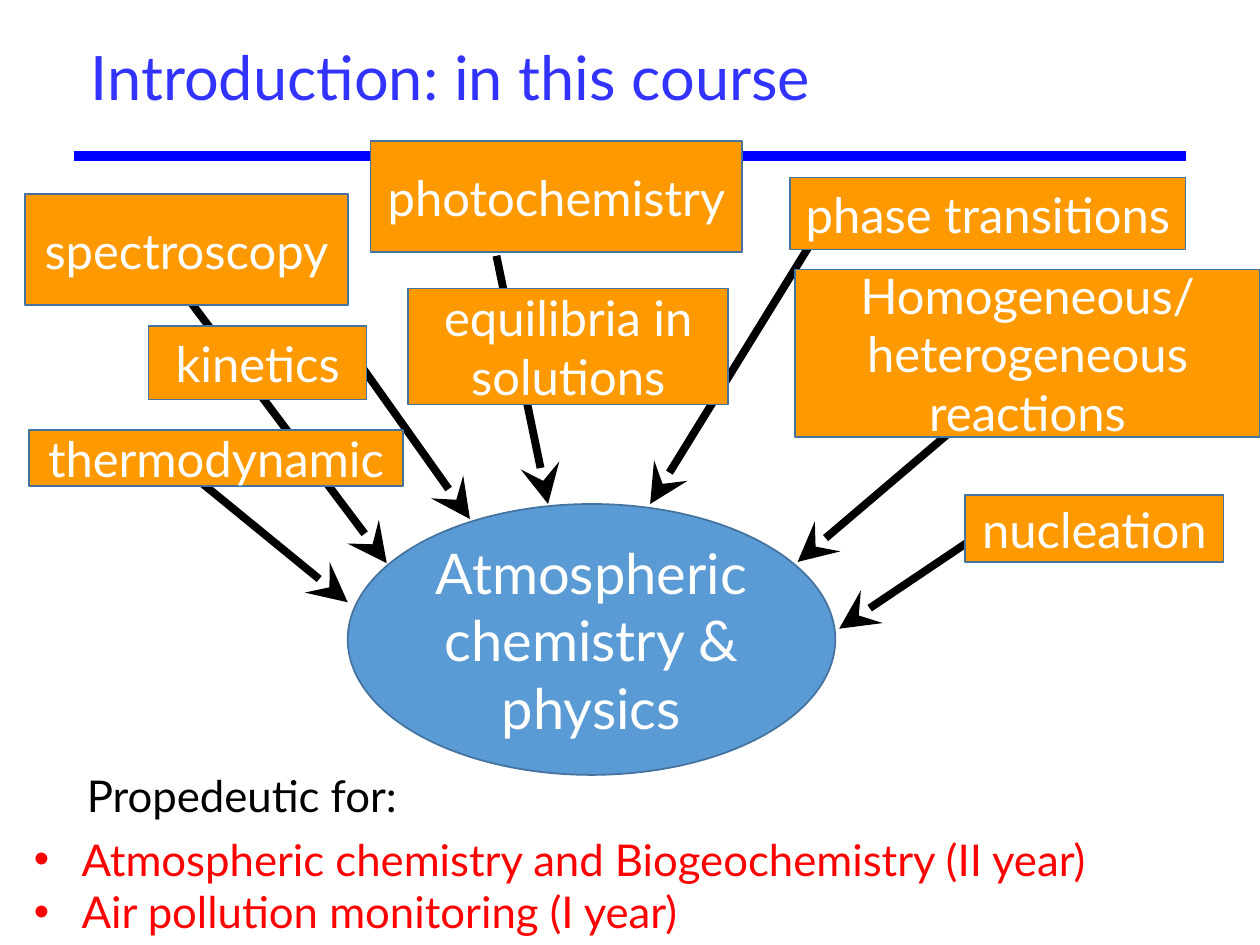
from lxml.etree import SubElement
from pptx import Presentation
from pptx.dml.color import RGBColor
from pptx.enum.shapes import MSO_CONNECTOR as CONNECTOR, MSO_SHAPE as SHAPE
from pptx.enum.text import MSO_ANCHOR as ANCHOR, PP_ALIGN as ALIGN
from pptx.oxml.ns import qn
from pptx.util import Inches, Pt


def color(value):
    return RGBColor.from_string(value)


def write(paragraph, words, size, ink):
    run = paragraph.add_run()
    run.text = words
    run.font.name = "Lato"
    run.font.size = Pt(size)
    run.font.color.rgb = color(ink)


prs = Presentation()
prs.slide_width = Inches(10)
prs.slide_height = Inches(7.5)
slide = prs.slides.add_slide(prs.slide_layouts[6])
shapes = slide.shapes

topic_arrows = [
    (2.75, 2.74, 3.73, 4.12),
    (1.23, 3.53, 2.76, 4.78),
    (7.85, 4.19, 6.66, 4.99),
    (7.81, 3.2, 6.33, 4.46),
    (1.29, 2.1, 3.07, 4.47),
    (6.51, 1.81, 5.16, 4),
    (3.94, 2.03, 4.35, 4),
]
title_rule = (0.59, 1.24, 9.41, 1.24)
for ends in topic_arrows + [title_rule]:
    is_rule = ends == title_rule
    line = shapes.add_connector(CONNECTOR.STRAIGHT, *map(Inches, ends))
    line.line.color.rgb = color("0000FF" if is_rule else "000000")
    line.line.width = Pt(6 if is_rule else 4.5)
    if not is_rule:
        SubElement(line.line._get_or_add_ln(), qn("a:tailEnd"), type="stealth", w="lg", len="lg")
    SubElement(line._element.spPr, qn("a:effectLst"))

title = shapes.add_textbox(Inches(0.62), Inches(0.14), Inches(9.09), Inches(1)).text_frame
title.word_wrap = True
title.vertical_anchor = ANCHOR.MIDDLE
title.paragraphs[0].line_spacing = 0.9
write(title.paragraphs[0], "Introduction: in this course", 35, "3333FF")

courses = shapes.add_textbox(Inches(0.17), Inches(6.56), Inches(9.06), Inches(0.94)).text_frame
courses.word_wrap = True
for index, course in enumerate([
    "Atmospheric chemistry and Biogeochemistry (II year)",
    "Air pollution monitoring (I year)",
]):
    item = courses.add_paragraph() if index else courses.paragraphs[0]
    write(item, course, 25, "FF0000")
    properties = item._p.get_or_add_pPr()
    properties.set("marL", str(Inches(0.38)))
    properties.set("indent", str(-Inches(0.38)))
    SubElement(properties, qn("a:buFont"), typeface="Arial")
    SubElement(properties, qn("a:buChar"), char="•")

subject = "Atmospheric chemistry & physics"
topics = [
    (subject, 2.76, 4, 3.87, 2.15),
    ("spectroscopy", 0.2, 1.54, 2.56, 0.88),
    ("photochemistry", 2.94, 1.12, 2.95, 0.88),
    ("Homogeneous/heterogeneous reactions", 6.31, 2.14, 3.69, 1.33),
    ("phase transitions", 6.27, 1.41, 3.14, 0.57),
    ("equilibria in solutions", 3.24, 2.29, 2.54, 0.92),
    ("kinetics", 1.18, 2.59, 1.73, 0.58),
    ("nucleation", 7.66, 3.93, 2.05, 0.53),
    ("thermodynamic", 0.23, 3.41, 2.97, 0.45),
]
for words, *box in topics:
    is_subject = words == subject
    topic = shapes.add_shape(SHAPE.OVAL if is_subject else SHAPE.RECTANGLE, *map(Inches, box))
    topic.shadow.inherit = False
    topic.fill.solid()
    topic.fill.fore_color.rgb = color("5B9BD5" if is_subject else "FF9900")
    topic.line.color.rgb = color("43739E")
    topic.line.width = Pt(1)
    topic.text_frame.word_wrap = True
    topic.text_frame.vertical_anchor = ANCHOR.MIDDLE
    label = topic.text_frame.paragraphs[0]
    label.alignment = ALIGN.CENTER
    write(label, words, 32 if is_subject else 28, "FFFFFF")

purpose = shapes.add_textbox(Inches(0.59), Inches(6.05), Inches(2.68), Inches(0.52)).text_frame
purpose.word_wrap = False
write(purpose.paragraphs[0], "Propedeutic for:", 25, "000000")

prs.save("out.pptx")
